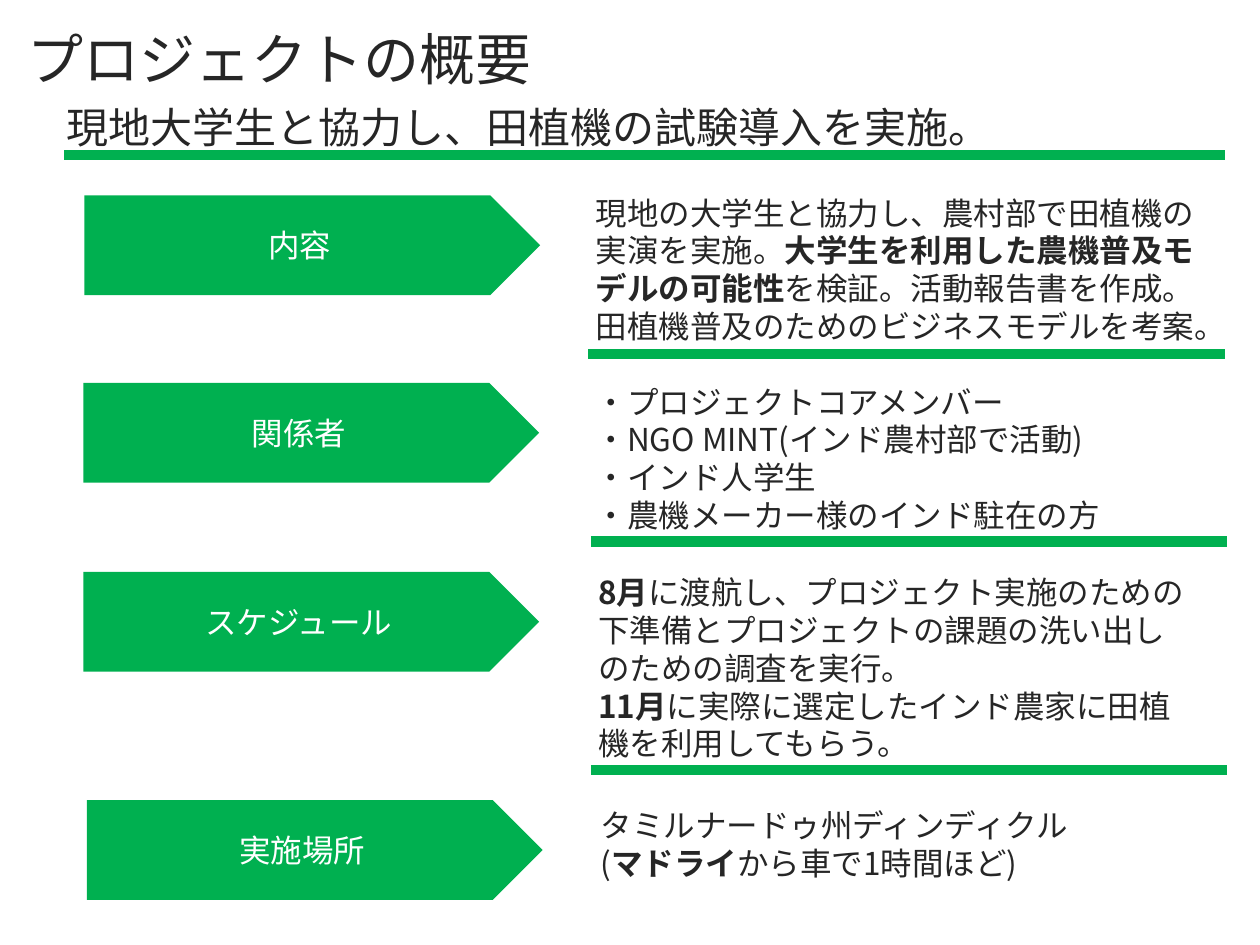
from lxml import etree
from pptx import Presentation
from pptx import util as u
from pptx.dml.color import RGBColor
from pptx.enum import shapes, text
from pptx.oxml import ns

HUES = {"ink": "262626", "leaf": "00B050", "white": "FFFFFF"}
FONT = "Noto Sans CJK JP"
ROWS = [
    ("内容", 1.7, 3.94, (11.76, 3.78, 12.95, 3.33),
     "現地の大学生と協力し、農村部で田植機の実演を実施。*大学生を利用した農機普及モデルの可能性*"
     "を検証。活動報告書を作成。田植機普及のためのビジネスモデルを考案。", (11.86, 7.14)),
    ("関係者", 1.68, 7.72, (11.76, 7.59, 12.4, 3.33),
     "・プロジェクトコアメンバー\v・NGO MINT(インド農村部で活動)\n"
     "・インド人学生\n・農機メーカー様のインド駐在の方", (11.91, 10.92)),
    ("スケジュール", 1.68, 11.53, (11.81, 11.43, 12.4, 4.11),
     "*8月*に渡航し、プロジェクト実施のための下準備とプロジェクトの課題の洗い出しのための調査を実行。\n"
     "*11月*に実際に選定したインド農家に田植機を利用してもらう。", (11.91, 15.52)),
    ("実施場所", 1.75, 16.13, (11.86, 16.13, 12.4, 1.8),
     "タミルナードゥ州ディンディクル\v(*マドライ*から車で1時間ほど)", None),
]


def hue(name):
    """Return the named colour."""
    return RGBColor.from_string(HUES[name])


def write(frame, words, size=18, color="ink", align="LEFT", anchor="TOP"):
    """Fill a frame; stars mark bold, \\n a paragraph and \\v a line break."""
    frame.word_wrap = True
    frame.vertical_anchor = getattr(text.MSO_ANCHOR, anchor)
    for i, line in enumerate(words.split("\n")):
        para = frame.add_paragraph() if i else frame.paragraphs[0]
        para.alignment = getattr(text.PP_ALIGN, align)
        for j, part in enumerate(line.split("*")):
            for k, bit in enumerate(part.split("\v")):
                if k:
                    para.add_line_break()
                if not bit:
                    continue
                run = para.add_run()
                run.text = bit
                font = run.font
                font.name, font.size, font.bold = FONT, u.Pt(size), j % 2 == 1
                font.color.rgb = hue(color)
                etree.SubElement(run._r.get_or_add_rPr(), ns.qn("a:ea"), typeface=FONT)


class Page:
    """Hold the style and the current slide."""

    def __init__(self, deck):
        """Add a slide with a title only."""
        self.slide = deck.slides.add_slide(deck.slide_layouts[5])
        self.items = self.slide.shapes

    def title(self, words, box):
        """Place the title."""
        head = self.items.title
        head.left, head.top, head.width, head.height = map(u.Cm, box)
        write(head.text_frame, words, size=32, anchor="MIDDLE")

    def note(self, words, box, **form):
        """Add a text box."""
        area = self.items.add_textbox(*map(u.Cm, box))
        write(area.text_frame, words, **form)
        area.text_frame.auto_size = text.MSO_AUTO_SIZE.SHAPE_TO_FIT_TEXT

    def label(self, words, x, y):
        """Add a green pentagon label."""
        tag = self.items.add_shape(
            shapes.MSO_SHAPE.PENTAGON, *map(u.Cm, (x, y, 9.19, 2.01)))
        tag.shadow.inherit = False
        tag.fill.solid()
        tag.fill.fore_color.rgb = hue("leaf")
        tag.line.fill.background()
        write(tag.text_frame, words, color="white", align="CENTER", anchor="MIDDLE")

    def rule(self, x, y, width=12.83):
        """Add a thick green line."""
        bar = self.items.add_connector(
            shapes.MSO_CONNECTOR.STRAIGHT, *map(u.Cm, (x, y, x + width, y)))
        bar.line.color.rgb = hue("leaf")
        bar.line.width = u.Pt(6)
        etree.SubElement(bar._element.spPr, ns.qn("a:effectLst"))


def main():
    """Build the slide."""
    deck = Presentation()
    deck.slide_width, deck.slide_height = u.Cm(25.4), u.Cm(19.05)
    page = Page(deck)
    page.title("プロジェクトの概要", (0.3, 0.1, 18.82, 2.16))
    for name, x, y, box, words, end in ROWS:
        page.label(name, x, y)
        page.note(words, box)
        if end:
            page.rule(*end)
    page.note("現地大学生と協力し、田植機の試験導入を実施。", (1.09, 1.93, 23.6, 1.27), size=24)
    page.rule(1.3, 3.12, 23.39)
    deck.save("out.pptx")


if __name__ == "__main__":
    main()
